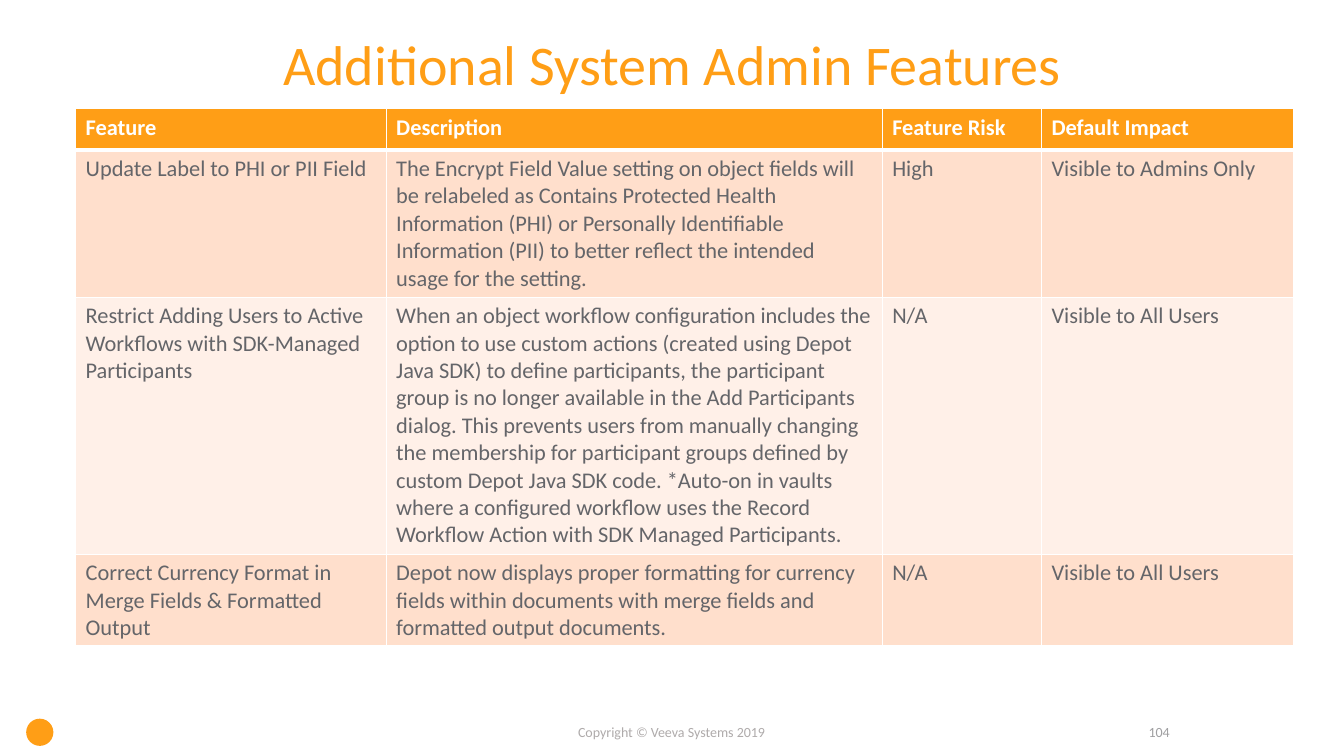
from lxml.etree import SubElement
from pptx import Presentation
from pptx.dml.color import RGBColor
from pptx.enum.shapes import MSO_SHAPE
from pptx.enum.text import MSO_ANCHOR, MSO_AUTO_SIZE, PP_ALIGN
from pptx.oxml.ns import qn
from pptx.util import Inches, Pt

ORANGE, WHITE = "FF9E16", "FFFFFF"
BANDS = ["FFDFCC", "FFF0E8"]
TITLE = "Additional System Admin Features"
ROWS = [
    ("Feature", "Description", "Feature Risk", "Default Impact"),
    (
        "Update Label to PHI or PII Field",
        "The Encrypt Field Value setting on object fields will be relabeled as "
        "Contains Protected Health Information (PHI) or Personally Identifiable "
        "Information (PII) to better reflect the intended usage for the setting.",
        "High",
        "Visible to Admins Only",
    ),
    (
        "Restrict Adding Users to Active Workflows with SDK-Managed Participants",
        "When an object workflow configuration includes the option to use custom "
        "actions (created using Depot Java SDK) to define participants, the "
        "participant group is no longer available in the Add Participants dialog. "
        "This prevents users from manually changing the membership for participant "
        "groups defined by custom Depot Java SDK code. *Auto-on in vaults where a "
        "configured workflow uses the Record Workflow Action with SDK Managed "
        "Participants.",
        "N/A",
        "Visible to All Users",
    ),
    (
        "Correct Currency Format in Merge Fields & Formatted Output",
        "Depot now displays proper formatting for currency fields within documents "
        "with merge fields and formatted output documents.",
        "N/A",
        "Visible to All Users",
    ),
]
WIDTHS = [3.08, 4.92, 1.58, 2.5]
HEIGHTS = [0.41, 1.46, 2.55, 0.91]
NOTES = [
    ("104", 10.58, 1.12, PP_ALIGN.RIGHT, "9F9FA1", True),
    ("Copyright © Veeva Systems 2019", 5.62, 2.08, PP_ALIGN.CENTER, "AFABAB", False),
]
HEAD = {"name": "Calibri", "size": Pt(16), "bold": True}
BODY = {**HEAD, "bold": False}
SMALL = {"name": "Calibri", "size": Pt(10)}
LARGE = {"name": "Calibri", "size": Pt(40)}


def color(code):
    return RGBColor.from_string(code)


def write(frame, text, form, tint, align=PP_ALIGN.LEFT):
    frame.text = text
    line = frame.paragraphs[0]
    line.alignment = align
    font = line.runs[0].font
    for key, value in form.items():
        setattr(font, key, value)
    font.color.rgb = color(tint)
    return line


def paint(shape, code):
    shape.fill.solid()
    shape.fill.fore_color.rgb = color(code)


def edge(cell, base):
    props = cell._tc.get_or_add_tcPr()
    for side, width in {"L": 1, "R": 1, "T": 1, "B": base}.items():
        line = SubElement(props, qn(f"a:ln{side}"), w=str(Pt(width)))
        fill = SubElement(line, qn("a:solidFill"))
        SubElement(fill, qn("a:srgbClr"), val=WHITE)


def add_title(slide):
    title = slide.shapes.title
    place = {"left": 0.3, "top": 0.11, "width": 12.73, "height": 1.2}
    for key, value in place.items():
        setattr(title, key, Inches(value))
    frame = title.text_frame
    frame.auto_size = MSO_AUTO_SIZE.NONE
    frame.vertical_anchor = MSO_ANCHOR.MIDDLE
    write(frame, TITLE, LARGE, ORANGE, PP_ALIGN.CENTER).line_spacing = 0.7


def add_grid(slide):
    table = slide.shapes.add_table(
        len(ROWS), len(WIDTHS), Inches(0.75), Inches(1.08),
        Inches(sum(WIDTHS)), Inches(sum(HEIGHTS)),
    ).table
    for column, width in zip(table.columns, WIDTHS):
        column.width = Inches(width)
    for r, (row, height) in enumerate(zip(ROWS, HEIGHTS)):
        table.rows[r].height = Inches(height)
        top = r == 0
        for c, text in enumerate(row):
            cell = table.cell(r, c)
            edge(cell, 3 if top else 1)
            paint(cell, ORANGE if top else BANDS[(r - 1) % 2])
            write(cell.text_frame, text, HEAD if top else BODY,
                  WHITE if top else "646569")


def add_foot(slide):
    mark = slide.shapes.add_shape(
        MSO_SHAPE.OVAL, Inches(0.26), Inches(7.13), Inches(0.27), Inches(0.27))
    mark.shadow.inherit = False
    paint(mark, ORANGE)
    mark.line.fill.background()
    for text, left, width, align, tint, wrap in NOTES:
        frame = slide.shapes.add_textbox(
            Inches(left), Inches(7.13), Inches(width), Inches(0.27)).text_frame
        frame.word_wrap = wrap
        write(frame, text, SMALL, tint, align)


def main():
    deck = Presentation()
    deck.slide_width, deck.slide_height = Inches(13.33), Inches(7.5)
    slide = deck.slides.add_slide(deck.slide_layouts[5])
    add_foot(slide)
    add_title(slide)
    add_grid(slide)
    deck.save("out.pptx")


if __name__ == "__main__":
    main()
